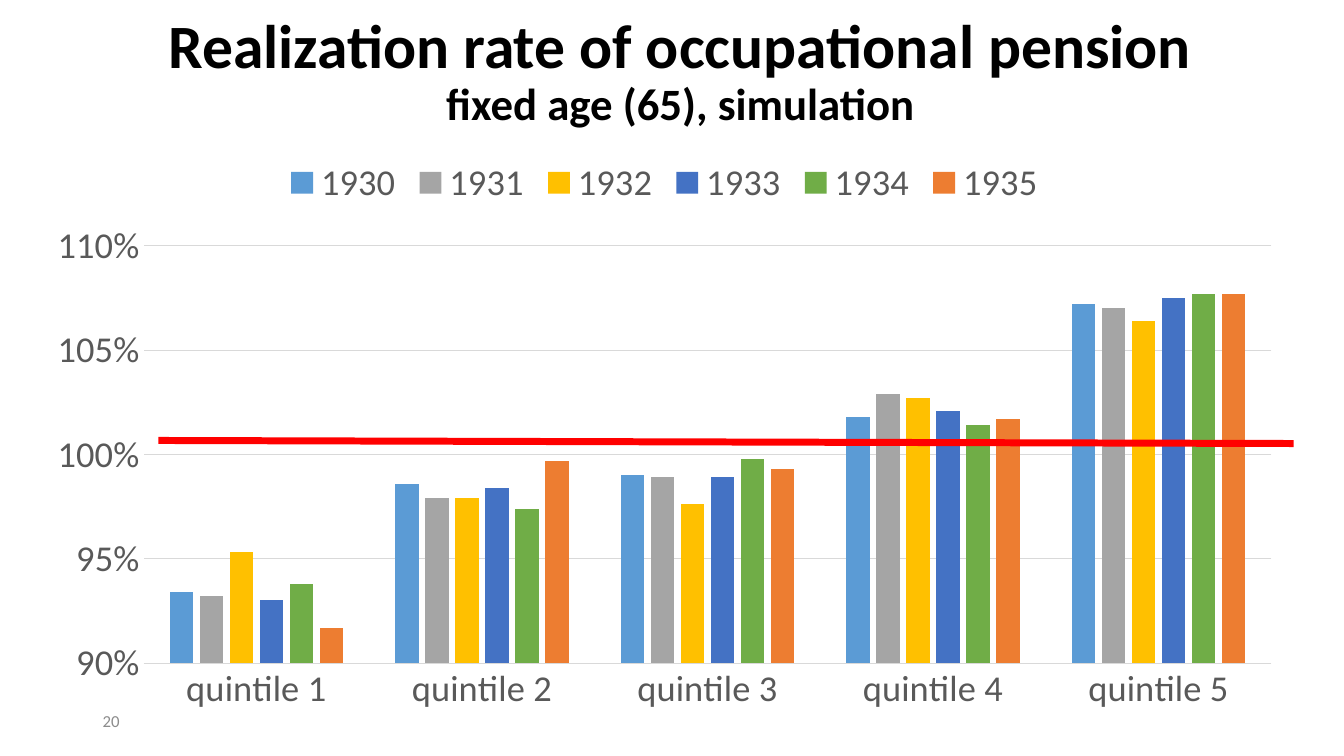
from dataclasses import dataclass

from lxml import etree
from pptx import Presentation
from pptx.chart.data import CategoryChartData
from pptx.dml.color import RGBColor
from pptx.enum.chart import XL_CHART_TYPE, XL_LEGEND_POSITION, XL_TICK_MARK
from pptx.enum.shapes import MSO_CONNECTOR
from pptx.enum.text import MSO_ANCHOR, MSO_AUTO_SIZE, PP_ALIGN
from pptx.oxml.ns import qn
from pptx.util import Pt

COLUMNS = XL_CHART_TYPE.COLUMN_CLUSTERED
LEGEND_TOP = XL_LEGEND_POSITION.TOP
NO_TICK = XL_TICK_MARK.NONE
STRAIGHT = MSO_CONNECTOR.STRAIGHT
MIDDLE = MSO_ANCHOR.MIDDLE
NO_FIT = MSO_AUTO_SIZE.NONE
LEFT, CENTER = PP_ALIGN.LEFT, PP_ALIGN.CENTER

PX = 9144  # 100 px to the inch
TITLE_ONLY = 5


@dataclass(frozen=True)
class Theme:
    font: str = "Calibri"
    heading: str = "000000"
    label: str = "595959"
    grid: str = "D9D9D9"
    reference: str = "FF0000"
    page: str = "8C8C8C"
    heading_pt: int = 44
    subheading_pt: int = 32
    chart_pt: int = 26
    page_pt: int = 12
    grid_pt: float = 0.75
    reference_pt: int = 5


THEME = Theme()

QUINTILES = [f"quintile {number}" for number in range(1, 6)]
COHORTS = {
    "1930": ("5B9BD5", (0.934, 0.986, 0.99, 1.018, 1.072)),
    "1931": ("A5A5A5", (0.932, 0.979, 0.989, 1.029, 1.07)),
    "1932": ("FFC000", (0.953, 0.979, 0.976, 1.027, 1.064)),
    "1933": ("4472C4", (0.93, 0.984, 0.989, 1.021, 1.075)),
    "1934": ("70AD47", (0.938, 0.974, 0.998, 1.014, 1.077)),
    "1935": ("ED7D31", (0.917, 0.997, 0.993, 1.017, 1.077)),
}


def emu(*lengths):
    return [length * PX for length in lengths]


def style_font(font, size, color, bold=False):
    font.name = THEME.font
    font.size = Pt(size)
    font.bold = bold
    font.color.rgb = RGBColor.from_string(color)


def style_line(line, color, width):
    line.color.rgb = RGBColor.from_string(color)
    line.width = Pt(width)


def add_heading(slide, box):
    heading = slide.shapes.title
    heading.left, heading.top, heading.width, heading.height = emu(*box)
    frame = heading.text_frame
    frame.text = "Realization rate of occupational pension\vfixed age (65), simulation"
    frame.auto_size = NO_FIT
    frame.vertical_anchor = MIDDLE
    paragraph = frame.paragraphs[0]
    paragraph.alignment = CENTER
    paragraph.line_spacing = 0.9
    for run, size in zip(paragraph.runs, (THEME.heading_pt, THEME.subheading_pt)):
        style_font(run.font, size, THEME.heading, bold=True)


def add_realization_chart(slide, box):
    """Place the columns, with the red reference line across their plot area."""
    data = CategoryChartData(number_format="0%")
    data.categories = QUINTILES
    for cohort, (_, rates) in COHORTS.items():
        data.add_series(cohort, rates)
    chart = slide.shapes.add_chart(COLUMNS, *emu(*box), data).chart
    chart.has_title = False
    style_font(chart.font, THEME.chart_pt, THEME.label)

    chart.has_legend = True
    chart.legend.position = LEGEND_TOP
    chart.legend.include_in_layout = False
    style_font(chart.legend.font, THEME.chart_pt, THEME.label)

    plot = chart.plots[0]
    plot.gap_width = 219
    plot.overlap = -27
    plot.vary_by_categories = False
    for series, (color, _) in zip(plot.series, COHORTS.values()):
        series.format.fill.solid()
        series.format.fill.fore_color.rgb = RGBColor.from_string(color)
        series.invert_if_negative = False

    quintiles, rates = chart.category_axis, chart.value_axis
    for axis in (quintiles, rates):
        axis.major_tick_mark = axis.minor_tick_mark = NO_TICK
        style_font(axis.tick_labels.font, THEME.chart_pt, THEME.label)
    style_line(quintiles.format.line, THEME.grid, THEME.grid_pt)
    rates.minimum_scale, rates.maximum_scale, rates.major_unit = 0.9, 1.1, 0.05
    rates.tick_labels.number_format = "0%"
    rates.tick_labels.number_format_is_linked = False
    rates.format.line.fill.background()
    rates.has_major_gridlines = True
    style_line(rates.major_gridlines.format.line, THEME.grid, THEME.grid_pt)

    left, top, width, _ = box
    ends = emu(left + 125, top + 292, left + width - 3, top + 295)
    reference = slide.shapes.add_connector(STRAIGHT, *ends)
    style_line(reference.line, THEME.reference, THEME.reference_pt)
    etree.SubElement(reference._element.spPr, qn("a:effectLst"))


def add_page_number(slide, box):
    frame = slide.shapes.add_textbox(*emu(*box)).text_frame
    frame.word_wrap = True
    frame.vertical_anchor = MIDDLE
    frame.text = "20"
    paragraph = frame.paragraphs[0]
    paragraph.alignment = LEFT
    style_font(paragraph.runs[0].font, THEME.page_pt, THEME.page)


def main():
    deck = Presentation()
    deck.slide_width, deck.slide_height = emu(1333, 750)
    slide = deck.slides.add_slide(deck.slide_layouts[TITLE_ONLY])
    add_heading(slide, (100, 0, 1150, 145))
    add_realization_chart(slide, (32, 145, 1254, 572))
    add_page_number(slide, (92, 695, 300, 40))
    deck.save("out.pptx")


if __name__ == "__main__":
    main()
